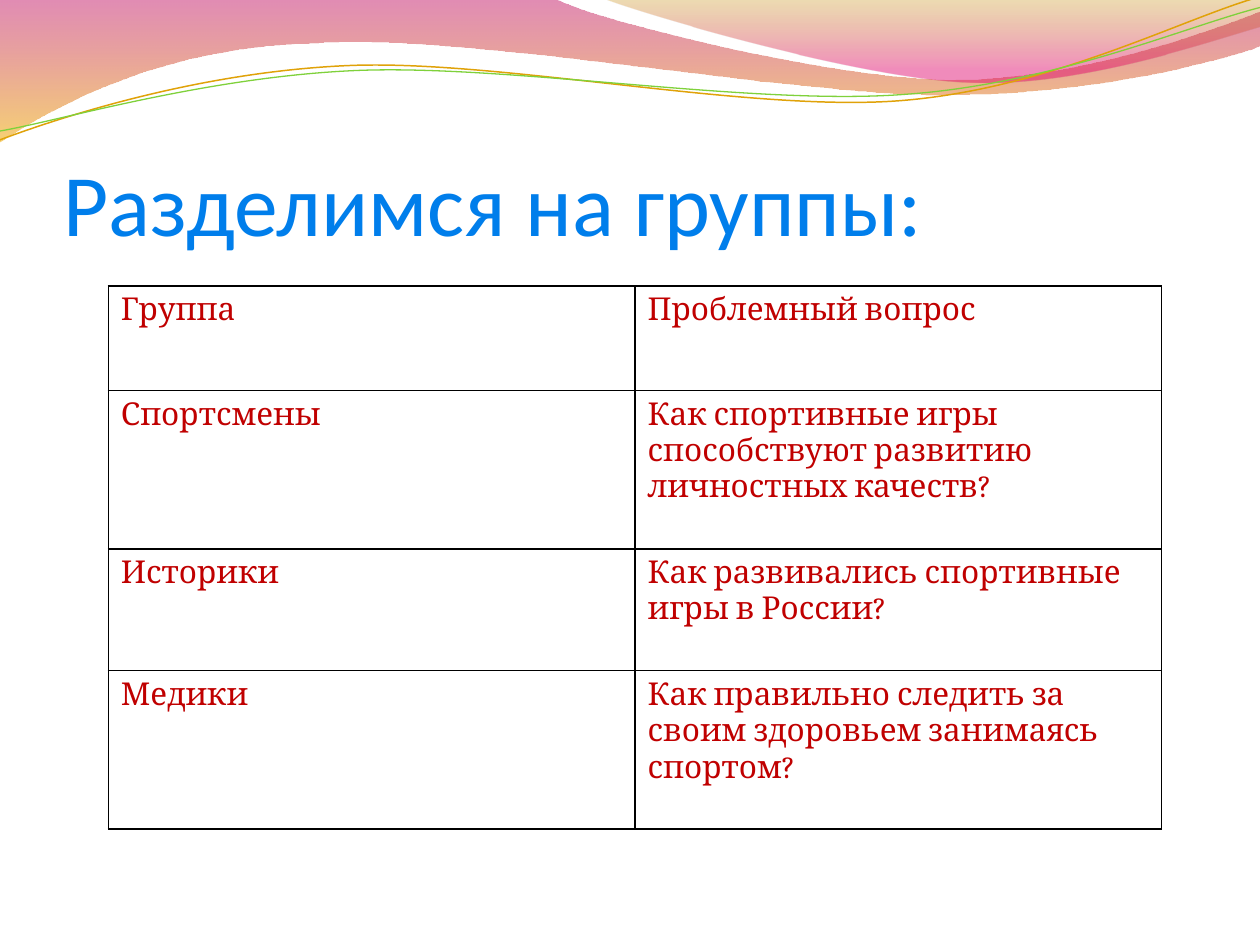
import math

import lxml.etree
import pptx
import pptx.dml.color
import pptx.enum.text
import pptx.oxml.ns
import pptx.util

Inches = pptx.util.Inches
Pt = pptx.util.Pt
RGBColor = pptx.dml.color.RGBColor
qn = pptx.oxml.ns.qn

THEME = {
    "title": {"font": "Calibri", "size": 50, "color": "007EEB"},
    "cell": {"font": "Cambria", "size": 18, "color": "C00000"},
    "border": {"color": "000000", "width": 1},
    "wide_wave": [(0, "BD0059", 45), (1, "F0AB00", 55)],
    "right_wave": [(0, "C38B00", 30), (0.8, "E1006B", 45)],
    "gold_line": ("E0A209", 0.85),
    "green_line": ("7FD13B", 0.75),
}


def write_text(frame, text, font, size, color):
    paragraph = frame.paragraphs[0]
    paragraph.alignment = pptx.enum.text.PP_ALIGN.LEFT
    run = paragraph.add_run()
    run.text = text
    run.font.name = font
    run.font.size = Pt(size)
    run.font.bold = False
    run.font.color.rgb = RGBColor.from_string(color)


def add_curve(shapes, start, segments, closed):
    points = [start]
    for segment in segments:
        points.extend(zip(segment[::2], segment[1::2]))
    points = [(Inches(x), Inches(y)) for x, y in points]
    builder = shapes.build_freeform(*points[0], scale=1.0)
    builder.add_line_segments(points[1:], close=closed)
    shape = builder.convert_to_shape()
    shape.shadow.inherit = False
    vertices = list(shape.element.iter(qn("a:lnTo")))
    for segment in segments:
        corners, vertices = vertices[:len(segment) // 2], vertices[len(segment) // 2:]
        if len(corners) == 3:
            bezier = lxml.etree.Element(qn("a:cubicBezTo"))
            corners[0].addprevious(bezier)
            for corner in corners:
                bezier.append(corner[0])
                corner.getparent().remove(corner)
    return shape


presentation = pptx.Presentation()
presentation.slide_width = Inches(10)
presentation.slide_height = Inches(7.5)
slide = presentation.slides.add_slide(presentation.slide_layouts[5])

waves = [
    ("wide_wave", (0, 0), [
        (4.4, -0.01),
        (4.76, 0.17, 6.64, 0.63, 7.58, 0.63),
        (8.53, 0.63, 9.58, 0.26, 10, 0.09),
        (10.01, 0.36),
        (9.83, 0.44, 8.7, 0.76, 7.46, 0.75),
        (6.22, 0.75, 3.82, 0.28, 2.57, 0.34),
        (1.29, 0.36, 0.46, 0.83, -0.01, 1.13),
        (0, 0),
    ]),
    ("right_wave", (4.79, -0.01), [
        (5.09, 0.11, 6.82, 0.62, 7.69, 0.65),
        (8.56, 0.69, 9.61, 0.32, 10, 0.21),
        (10, 0),
        (4.79, -0.01),
    ]),
]
for name, start, segments in waves:
    wave = add_curve(slide.shapes, start, segments, True)
    wave.line.fill.background()
    wave.fill.gradient()
    wave.fill.gradient_angle = 270
    for stop, (position, color, opacity) in zip(wave.fill.gradient_stops, THEME[name]):
        stop.position = position
        stop.color.rgb = RGBColor.from_string(color)
    gradient = wave.element.spPr.find(qn("a:gradFill"))
    for color_element, (_, _, opacity) in zip(gradient.iter(qn("a:srgbClr")), THEME[name]):
        lxml.etree.SubElement(color_element, qn("a:alpha"), val=str(opacity * 1000))

tilt = 2.7
cosine, sine = math.cos(math.radians(tilt)), math.sin(math.radians(tilt))
wave_lines = [
    ("gold_line", (4.99, 0.575), (0, 1.11), [
        (0.48, 0.93, 1.58, 0.57, 2.77, 0.52),
        (3.95, 0.47, 5.93, 0.89, 7.13, 0.8),
        (8.33, 0.71, 9.38, 0.15, 9.98, -0.02),
    ]),
    ("green_line", (5, 0.59), (0, 1.04), [
        (0.47, 0.96, 1.64, 0.61, 2.83, 0.56),
        (4.03, 0.51, 5.97, 0.84, 7.17, 0.75),
        (8.36, 0.67, 9.41, 0.21, 10, 0.06),
    ]),
]
for name, (center_x, center_y), start, segments in wave_lines:
    level = []
    for segment in [start, *segments]:
        offsets = [(x - center_x, y - center_y) for x, y in zip(segment[::2], segment[1::2])]
        level.append([
            value
            for x, y in offsets
            for value in (center_x + x * cosine - y * sine, center_y + x * sine + y * cosine)
        ])
    color, width = THEME[name]
    wave_line = add_curve(slide.shapes, level[0], level[1:], False)
    wave_line.rotation = 360 - tilt
    wave_line.fill.background()
    wave_line.line.color.rgb = RGBColor.from_string(color)
    wave_line.line.width = Pt(width)

title = slide.shapes.title
title.element.getparent().append(title.element)
title.left, title.top = Inches(0.5), Inches(0.77)
title.width, title.height = Inches(9.08), Inches(1.25)
title_frame = title.text_frame
title_frame.auto_size = pptx.enum.text.MSO_AUTO_SIZE.NONE
title_frame.word_wrap = True
title_frame.vertical_anchor = pptx.enum.text.MSO_ANCHOR.BOTTOM
title_frame.margin_left = title_frame.margin_right = title_frame.margin_bottom = 0
title_frame.margin_top = Inches(0.05)
write_text(title_frame, "Разделимся на группы:", **THEME["title"])

groups = [
    ("Группа", "Проблемный вопрос"),
    ("Спортсмены", "Как спортивные игры способствуют развитию личностных качеств?"),
    ("Историки", "Как развивались спортивные игры в России?"),
    ("Медики", "Как правильно следить за своим здоровьем занимаясь спортом?"),
]
table_shape = slide.shapes.add_table(
    len(groups), 2, Inches(0.86), Inches(2.27), Inches(8.36), Inches(4.13)
)
table = table_shape.table
table.first_row = False
table.horz_banding = False
for row, texts in zip(table.rows, groups):
    row.height = Inches(0.83)
    for cell, text in zip(row.cells, texts):
        write_text(cell.text_frame, text, **THEME["cell"])
        cell.margin_bottom = Inches(0.34)
        properties = cell._tc.get_or_add_tcPr()
        for side in ("a:lnL", "a:lnR", "a:lnT", "a:lnB"):
            border = lxml.etree.SubElement(
                properties, qn(side), w=str(Pt(THEME["border"]["width"]))
            )
            fill = lxml.etree.SubElement(border, qn("a:solidFill"))
            lxml.etree.SubElement(fill, qn("a:srgbClr"), val=THEME["border"]["color"])
        cell.fill.background()
table_shape.height = Inches(4.13)

presentation.save("out.pptx")
